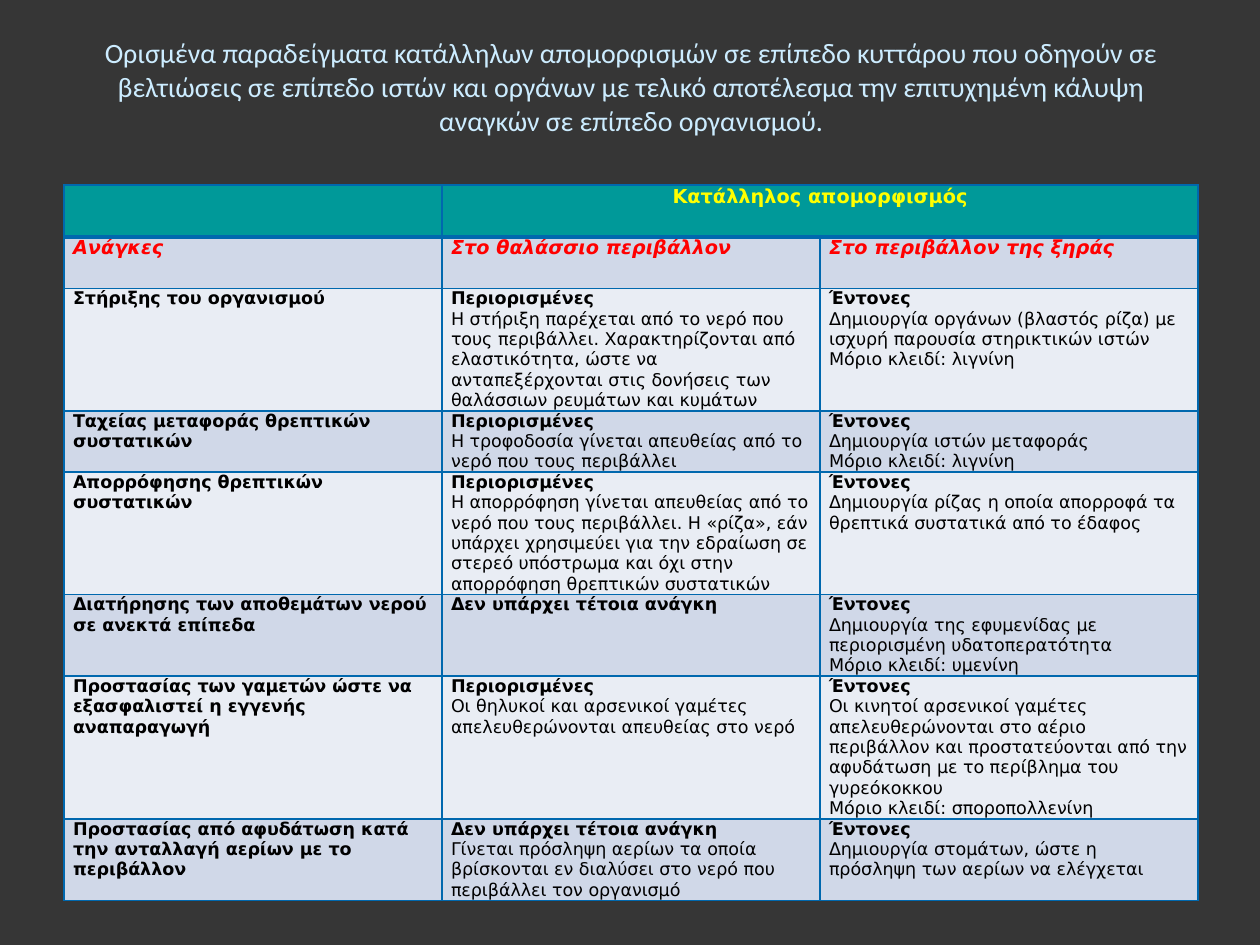
from lxml import etree
from pptx import Presentation
from pptx.dml.color import RGBColor
from pptx.enum.text import MSO_ANCHOR, PP_ALIGN
from pptx.oxml.ns import qn
from pptx.util import Inches, Pt

COLORS = {
    "background": "363636", "title": "CCECFF", "border": "0068AE",
    "header": "009999", "header_text": "FFFF00", "subheader_text": "FF0000",
    "dark_band": "D0D8E8", "light_band": "E9EDF4", "body": "000000",
}
KEY = "Μόριο κλειδί: "
LIMITED, INTENSE, NO_NEED = "Περιορισμένες", "Έντονες", "Δεν υπάρχει τέτοια ανάγκη"
ROWS = [
    [[], ["Κατάλληλος απομορφισμός"], []],
    [["Ανάγκες"], ["Στο θαλάσσιο περιβάλλον"], ["Στο περιβάλλον της ξηράς"]],
    [["Στήριξης του οργανισμού"],
     [LIMITED, "Η στήριξη παρέχεται από το νερό που τους περιβάλλει. Χαρακτηρίζονται από ελαστικότητα, "
      "ώστε να ανταπεξέρχονται στις δονήσεις των θαλάσσιων ρευμάτων και κυμάτων"],
     [INTENSE, "Δημιουργία οργάνων (βλαστός ρίζα) με ισχυρή παρουσία στηρικτικών ιστών", KEY + "λιγνίνη"]],
    [["Ταχείας μεταφοράς θρεπτικών συστατικών"],
     [LIMITED, "Η τροφοδοσία γίνεται απευθείας από το νερό που τους περιβάλλει"],
     [INTENSE, "Δημιουργία ιστών μεταφοράς", KEY + "λιγνίνη"]],
    [["Απορρόφησης θρεπτικών συστατικών"],
     [LIMITED, "Η απορρόφηση γίνεται απευθείας από το νερό που τους περιβάλλει. Η «ρίζα», εάν υπάρχει "
      "χρησιμεύει για την εδραίωση σε στερεό υπόστρωμα και όχι στην απορρόφηση θρεπτικών συστατικών"],
     [INTENSE, "Δημιουργία ρίζας η οποία απορροφά τα θρεπτικά συστατικά από το έδαφος"]],
    [["Διατήρησης των αποθεμάτων νερού σε ανεκτά επίπεδα"],
     [NO_NEED],
     [INTENSE, "Δημιουργία της εφυμενίδας με περιορισμένη υδατοπερατότητα", KEY + "υμενίνη"]],
    [["Προστασίας των γαμετών ώστε να εξασφαλιστεί η εγγενής αναπαραγωγή"],
     [LIMITED, "Οι θηλυκοί και αρσενικοί γαμέτες απελευθερώνονται απευθείας στο νερό"],
     [INTENSE, "Οι κινητοί αρσενικοί γαμέτες απελευθερώνονται στο αέριο περιβάλλον και προστατεύονται "
      "από την αφυδάτωση με το περίβλημα του γυρεόκοκκου", KEY + "σποροπολλενίνη"]],
    [["Προστασίας από αφυδάτωση κατά την ανταλλαγή αερίων με το περιβάλλον"],
     [NO_NEED, "Γίνεται πρόσληψη αερίων τα οποία βρίσκονται εν διαλύσει στο νερό που περιβάλλει τον οργανισμό"],
     [INTENSE, "Δημιουργία στομάτων, ώστε η πρόσληψη των αερίων να ελέγχεται"]],
]


def write_paragraph(paragraph, text, size=10, font="DejaVu Sans", color="body",
                    bold=False, italic=False, align=PP_ALIGN.LEFT):
    paragraph.alignment = align
    run = paragraph.add_run()
    run.text = text
    run.font.size = Pt(size)
    run.font.name = font
    run.font.bold = bold
    run.font.italic = italic
    run.font.color.rgb = RGBColor.from_string(COLORS[color])


def set_borders(cell, top=1, bottom=1):
    properties = cell._tc.get_or_add_tcPr()
    for side, width in (("L", 1), ("R", 1), ("T", top), ("B", bottom)):
        line = etree.SubElement(properties, qn(f"a:ln{side}"), w=str(Pt(width)))
        fill = etree.SubElement(line, qn("a:solidFill"))
        etree.SubElement(fill, qn("a:srgbClr"), val=COLORS["border"])


presentation = Presentation()
presentation.slide_width, presentation.slide_height = Inches(10), Inches(7.5)
slide = presentation.slides.add_slide(presentation.slide_layouts[5])
slide.background.fill.solid()
slide.background.fill.fore_color.rgb = RGBColor.from_string(COLORS["background"])

title = slide.shapes.title
title.left, title.top, title.width, title.height = Inches(0.51), Inches(0.13), Inches(9), Inches(1.11)
title.text_frame.vertical_anchor = MSO_ANCHOR.MIDDLE
write_paragraph(
    title.text_frame.paragraphs[0],
    "Ορισμένα παραδείγματα κατάλληλων απομορφισμών σε επίπεδο κυττάρου που οδηγούν σε βελτιώσεις "
    "σε επίπεδο ιστών και οργάνων με τελικό αποτέλεσμα την επιτυχημένη κάλυψη αναγκών σε επίπεδο οργανισμού.",
    size=16, font="Calibri", color="title", align=PP_ALIGN.CENTER)

table = slide.shapes.add_table(len(ROWS), 3, Inches(0.51), Inches(1.47),
                               Inches(9), Inches(0.41) * len(ROWS)).table
table.cell(0, 1).merge(table.cell(0, 2))

for row_index, row in enumerate(ROWS):
    band = "header" if row_index == 0 else ("dark_band" if row_index % 2 else "light_band")
    for column_index, lines in enumerate(row):
        cell = table.cell(row_index, column_index)
        cell.margin_left = cell.margin_right = Inches(0.07)
        cell.margin_top = cell.margin_bottom = 0
        set_borders(cell, top=3 if row_index == 1 else 1, bottom=3 if row_index == 0 else 1)
        cell.fill.solid()
        cell.fill.fore_color.rgb = RGBColor.from_string(COLORS[band])
        for line_index, text in enumerate(lines):
            frame = cell.text_frame
            paragraph = frame.add_paragraph() if line_index else frame.paragraphs[0]
            if row_index == 0:
                write_paragraph(paragraph, text, size=11, color="header_text", bold=True, align=PP_ALIGN.CENTER)
            elif row_index == 1:
                write_paragraph(paragraph, text, size=11, color="subheader_text", bold=True, italic=True)
            else:
                write_paragraph(paragraph, text, bold=line_index == 0)

presentation.save("out.pptx")
